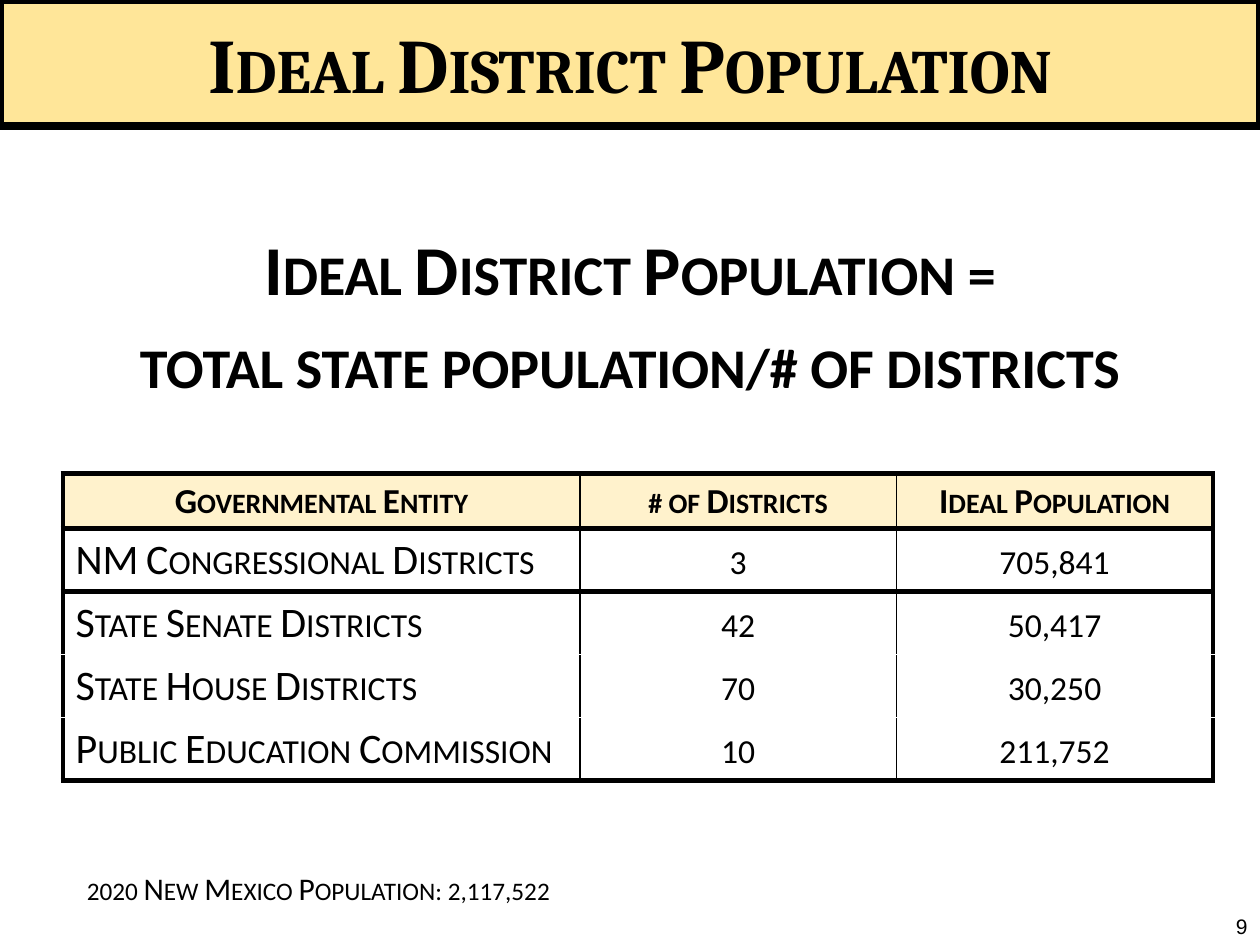
from lxml import etree
from pptx import Presentation, util as u
from pptx.dml.color import RGBColor
from pptx.enum import shapes, text
from pptx.oxml.ns import qn

COLORS = {"ink": "000000", "banner": "FFE699", "header": "FFF2CC", "rule": "FFFFFF"}
TITLE = "Ideal District Population"
FORMULA = ["Ideal District Population =", "total state population/# of districts"]
ROWS = [
    ("Governmental Entity", "# of Districts", "Ideal Population"),
    ("NM Congressional Districts", "3", "705,841"),
    ("State Senate Districts", "42", "50,417"),
    ("State House Districts", "70", "30,250"),
    ("Public Education Commission", "10", "211,752"),
]
COL_WIDTHS = [10.42, 6.38, 6.38]
ROW_HEIGHT = 1.03
HEAVY_RULES = (0, 1, 2, len(ROWS))
NOTE = "2020 New Mexico Population: 2,117,522"
PAGE = "9"
LEFT, CENTER, RIGHT = text.PP_ALIGN.LEFT, text.PP_ALIGN.CENTER, text.PP_ALIGN.RIGHT


def rgb(name):
    return RGBColor.from_string(COLORS[name])


def write(tf, lines, size, font="Calibri", bold=False, align=LEFT, small=True):
    tf.text = "\n".join(lines)
    for p in tf.paragraphs:
        p.alignment = align
        for r in p.runs:
            r.font.size = u.Pt(size)
            r.font.name = font
            r.font.bold = bold
            r.font.color.rgb = rgb("ink")
            if small:
                r.font._element.set("cap", "small")


def add_text(s, box, lines, size, anchor=text.MSO_ANCHOR.TOP, **style):
    tf = s.shapes.add_textbox(*map(u.Cm, box)).text_frame
    tf.word_wrap = True
    tf.vertical_anchor = anchor
    write(tf, lines, size, **style)
    return tf


def set_border(cell, side, heavy, color="ink"):
    ln = etree.SubElement(cell._tc.get_or_add_tcPr(), qn(f"a:ln{side}"),
                          w=str(u.Pt(3 if heavy else 1)))
    fill = etree.SubElement(ln, qn("a:solidFill"))
    etree.SubElement(fill, qn("a:srgbClr"), val=COLORS[color])


def add_banner(s, width):
    sp = s.shapes.add_shape(shapes.MSO_SHAPE.RECTANGLE, 0, 0, width, u.Cm(2.54))
    sp.shadow.inherit = False
    sp.fill.solid()
    sp.fill.fore_color.rgb = rgb("banner")
    sp.line.color.rgb = rgb("ink")
    sp.line.width = u.Pt(4.5)
    sp.text_frame.vertical_anchor = text.MSO_ANCHOR.MIDDLE
    write(sp.text_frame, [TITLE], 44, font="Cambria", bold=True, align=CENTER)


def add_districts(s):
    last = len(COL_WIDTHS) - 1
    tbl = s.shapes.add_table(len(ROWS), len(COL_WIDTHS), u.Cm(1.27), u.Cm(9.55),
                             u.Cm(sum(COL_WIDTHS)), u.Cm(ROW_HEIGHT * len(ROWS))).table
    tbl.horz_banding = False
    for col, width in zip(tbl.columns, COL_WIDTHS):
        col.width = u.Cm(width)
    for i, row in enumerate(ROWS):
        for j, value in enumerate(row):
            cell = tbl.cell(i, j)
            header = i == 0
            set_border(cell, "L", j == 0)
            set_border(cell, "R", j == last)
            for side, edge in (("T", i), ("B", i + 1)):
                heavy = edge in HEAVY_RULES
                set_border(cell, side, heavy, "ink" if heavy else "rule")
            if header:
                cell.fill.solid()
                cell.fill.fore_color.rgb = rgb("header")
            else:
                cell.fill.background()
            write(cell.text_frame, [value], 20 if header else 24, bold=header,
                  align=CENTER if header or j else LEFT)


def main():
    prs = Presentation()
    prs.slide_width, prs.slide_height = u.Cm(25.4), u.Cm(19.05)
    s = prs.slides.add_slide(prs.slide_layouts[6])
    tf = add_text(s, (0, 4.62, 25.4, 4.27), FORMULA, 40, bold=True, align=CENTER)
    for k, p in enumerate(tf.paragraphs):
        p.line_spacing = 0.9
        p.space_before = u.Pt(10 if k else 0)
    add_banner(s, prs.slide_width)
    add_districts(s)
    add_text(s, (1.5, 17.4, 12.78, 1.02), [NOTE], 18)
    add_text(s, (20.12, 17.78, 5.28, 1.27), [PAGE], 12, font="Arial", align=RIGHT,
             small=False, anchor=text.MSO_ANCHOR.BOTTOM)
    prs.save("out.pptx")


if __name__ == "__main__":
    main()
